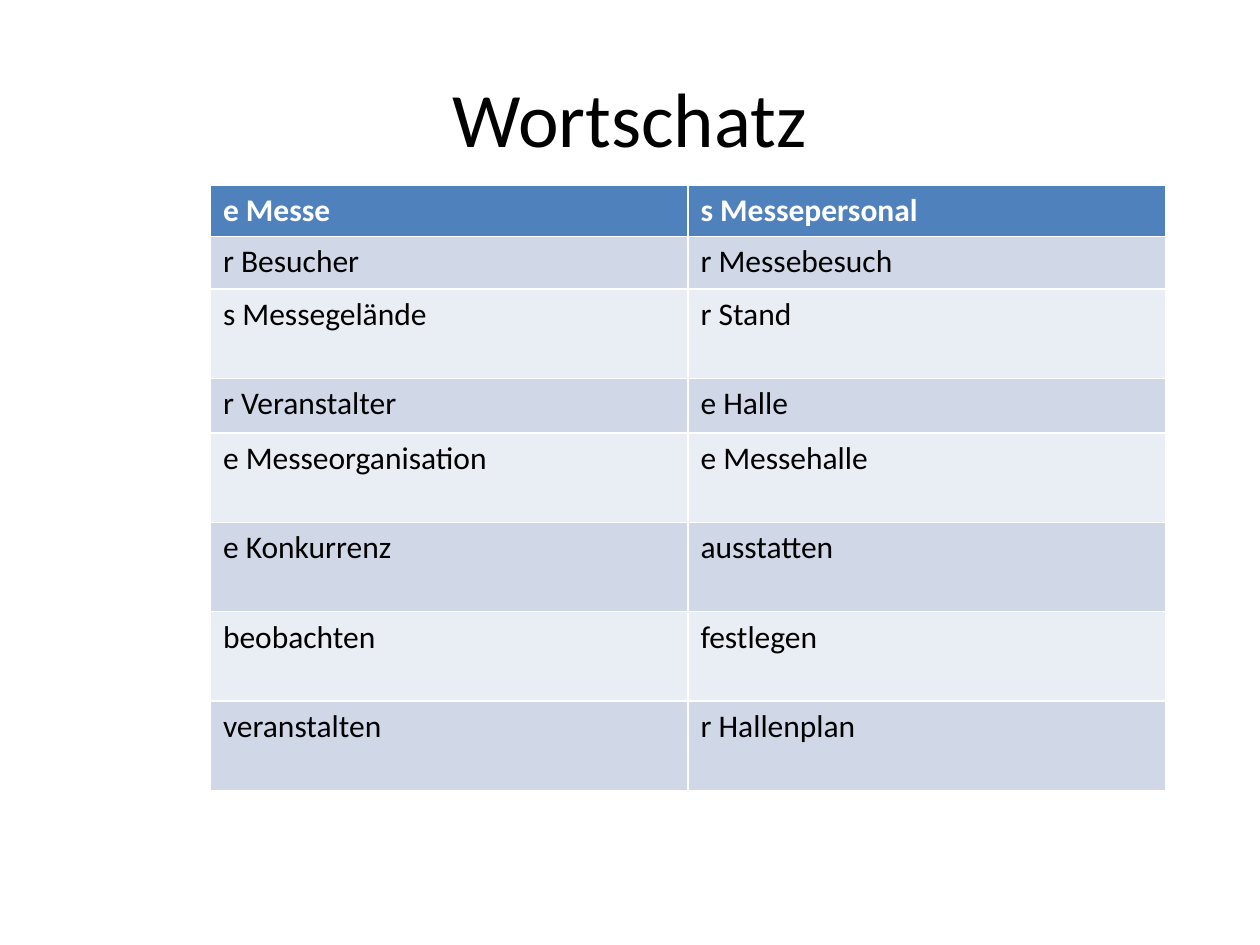
from pptx import Presentation
from pptx.dml.color import RGBColor
from pptx.enum.text import MSO_ANCHOR, PP_ALIGN
from pptx.util import Inches, Pt

TITLE = "Wortschatz"
VOCABULARY = [
    ("e Messe", "s Messepersonal", 0.4),
    ("r Besucher", "r Messebesuch", 0.42),
    ("s Messegelände", "r Stand", 0.71),
    ("r Veranstalter", "e Halle", 0.43),
    ("e Messeorganisation", "e Messehalle", 0.71),
    ("e Konkurrenz", "ausstatten", 0.71),
    ("beobachten", "festlegen", 0.71),
    ("veranstalten", "r Hallenplan", 0.71),
]
HEADER_FILL = "4F81BD"
BAND_FILLS = ("E9EDF4", "D0D8E8")
COLUMN_WIDTH = 3.79


def color(value):
    return RGBColor.from_string(value)


def write(frame, text, size=18, fill="000000", bold=False, align=PP_ALIGN.LEFT):
    para = frame.paragraphs[0]
    para.alignment = align
    span = para.add_run()
    span.text = text
    span.font.name = "Calibri"
    span.font.size = Pt(size)
    span.font.bold = bold
    span.font.color.rgb = color(fill)


def add_title(page):
    title = page.shapes.title
    title.left, title.top = Inches(0.5), Inches(0.3)
    title.width, title.height = Inches(9), Inches(1.25)
    title.text_frame.vertical_anchor = MSO_ANCHOR.MIDDLE
    write(title.text_frame, TITLE, size=44, align=PP_ALIGN.CENTER)


def add_vocabulary(page):
    total = sum(height for *words, height in VOCABULARY)
    table = page.shapes.add_table(
        len(VOCABULARY), 2, Inches(1.67), Inches(1.47),
        Inches(2 * COLUMN_WIDTH), Inches(total),
    ).table
    for column in table.columns:
        column.width = Inches(COLUMN_WIDTH)
    for index, (*words, height) in enumerate(VOCABULARY):
        header = index == 0
        table.rows[index].height = Inches(height)
        for cell, word in zip(table.rows[index].cells, words):
            cell.fill.solid()
            cell.fill.fore_color.rgb = color(HEADER_FILL if header else BAND_FILLS[index % 2])
            write(cell.text_frame, word, bold=header, fill="FFFFFF" if header else "000000")


def main():
    deck = Presentation()
    deck.slide_width, deck.slide_height = Inches(10), Inches(7.5)
    page = deck.slides.add_slide(deck.slide_layouts[5])
    add_title(page)
    add_vocabulary(page)
    deck.save("out.pptx")


if __name__ == "__main__":
    main()
